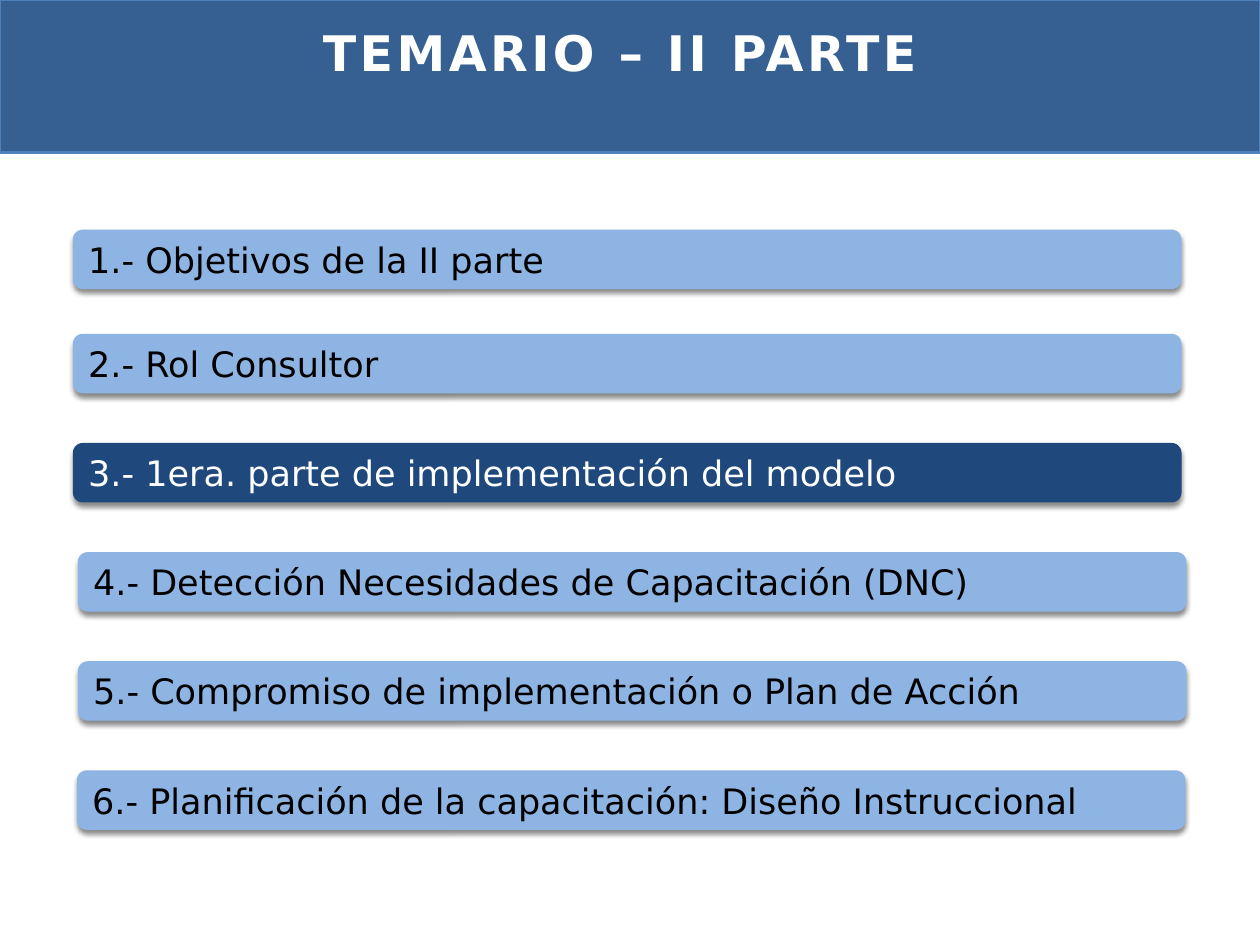
import pptx
import pptx.util
import pptx.dml.color
import pptx.enum.shapes
import pptx.enum.text
import pptx.oxml
import pptx.oxml.ns

Cm, Pt = pptx.util.Cm, pptx.util.Pt
MSO_SHAPE = pptx.enum.shapes.MSO_SHAPE
ANCHOR = pptx.enum.text.MSO_ANCHOR
ALIGN = pptx.enum.text.PP_ALIGN

FONT = "DejaVu Sans"
COLORS = {
    "header": "376092",
    "header_line": "4F81BD",
    "topic": "8EB4E3",
    "current": "1F497D",
    "dark_text": "000000",
    "light_text": "FFFFFF",
}
TOPICS = [  # text, left edge in cm
    ("1.- Objetivos de la II parte", 1.47),
    ("2.- Rol Consultor", 1.47),
    ("3.- 1era. parte de implementación del modelo", 1.47),
    ("4.- Detección Necesidades de Capacitación (DNC)", 1.57),
    ("5.- Compromiso de implementación o Plan de Acción", 1.57),
    ("6.- Planificación de la capacitación: Diseño Instruccional", 1.55),
]
CURRENT = 2
FIRST_TOP, SECOND_TOP, STEP = 4.63, 6.73, 2.2
SHADOW = (
    '<a:effectLst %s><a:outerShdw blurRad="38100" dist="25400" dir="5400000" '
    'rotWithShape="0"><a:srgbClr val="000000"><a:alpha val="45000"/></a:srgbClr>'
    "</a:outerShdw></a:effectLst>" % pptx.oxml.ns.nsdecls("a")
)


def rgb(name):
    return pptx.dml.color.RGBColor.from_string(COLORS[name])


def set_text(sp, text, size, color, align, anchor):
    tf = sp.text_frame
    tf.text = text
    tf.word_wrap = True
    tf.vertical_anchor = anchor
    p = tf.paragraphs[0]
    p.alignment = align
    r = p.runs[0]
    r.font.name = FONT
    r.font.size = Pt(size)
    r.font.color.rgb = rgb(color)
    return r


def add_header(s):
    """Add the band at the top, behind everything else."""
    sp = s.shapes.add_shape(MSO_SHAPE.RECTANGLE, 0, 0, Cm(25.4), Cm(3.07))
    sp.shadow.inherit = False
    sp.fill.solid()
    sp.fill.fore_color.rgb = rgb("header")
    sp.line.color.rgb = rgb("header_line")
    sp.line.width = Pt(1.5)
    s.shapes._spTree.insert(2, sp._element)


def set_title(s, text):
    sp = s.shapes.title
    sp.left, sp.top, sp.width, sp.height = Cm(1.3), Cm(0.33), Cm(22.4), Cm(3.18)
    r = set_text(sp, text, 28, "light_text", ALIGN.CENTER, ANCHOR.TOP)
    r.font.bold = True
    r.font._element.set("spc", "200")


def add_topic(s, text, left, top, current):
    sp = s.shapes.add_shape(
        MSO_SHAPE.ROUNDED_RECTANGLE, Cm(left), Cm(top), Cm(22.35), Cm(1.2))
    sp.fill.solid()
    sp.fill.fore_color.rgb = rgb("current" if current else "topic")
    sp.line.fill.background()
    sp._element.spPr.append(pptx.oxml.parse_xml(SHADOW))
    set_text(sp, text, 20, "light_text" if current else "dark_text",
             ALIGN.LEFT, ANCHOR.MIDDLE)


def main():
    prs = pptx.Presentation()
    prs.slide_width, prs.slide_height = Cm(25.4), Cm(19.05)
    s = prs.slides.add_slide(prs.slide_layouts[5])
    add_header(s)
    set_title(s, "TEMARIO – II PARTE")
    for i, (text, left) in enumerate(TOPICS):
        top = SECOND_TOP + (i - 1) * STEP if i else FIRST_TOP
        add_topic(s, text, left, top, i == CURRENT)
    prs.save("out.pptx")


if __name__ == "__main__":
    main()
